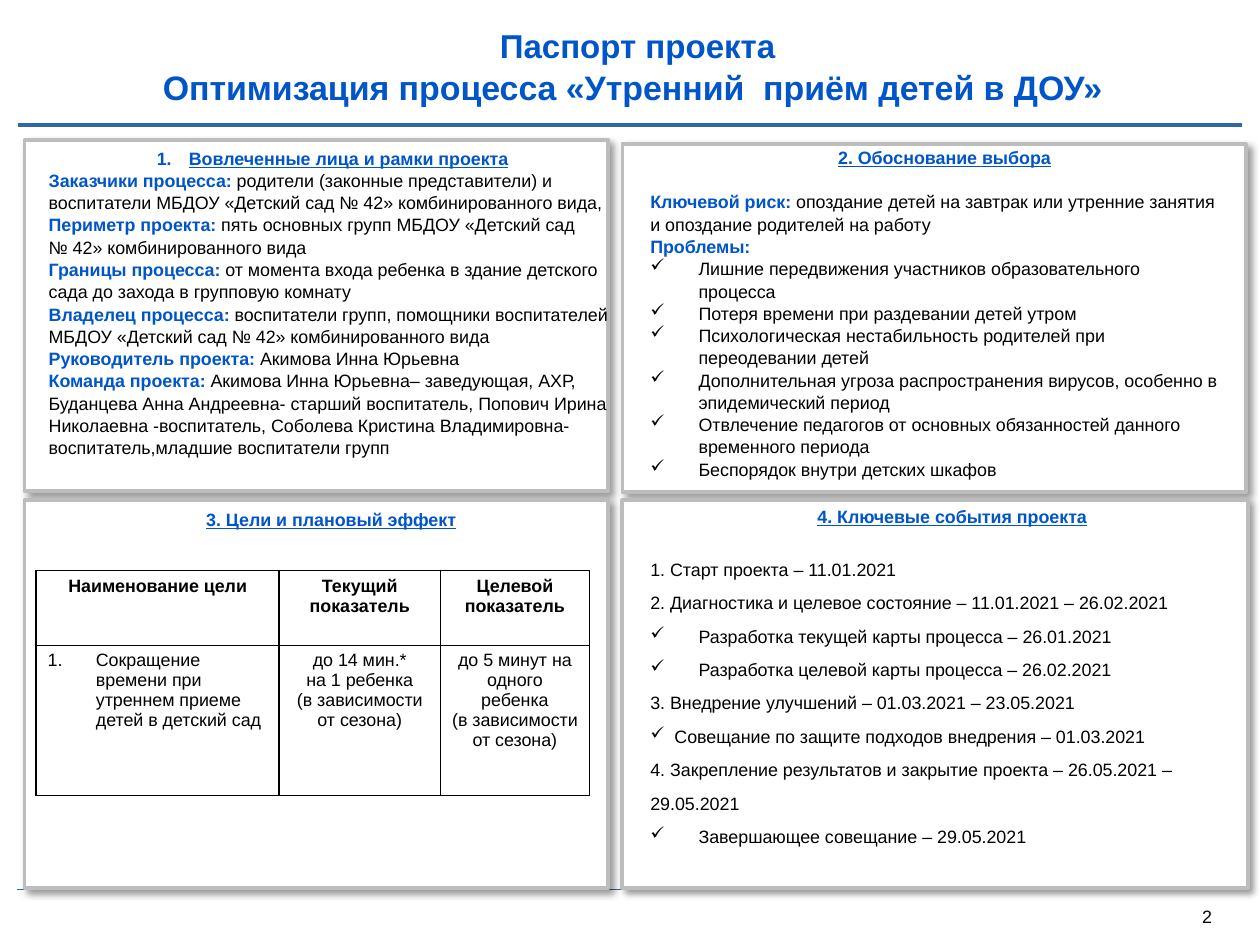
from lxml import etree
from pptx import Presentation
from pptx import util as u
from pptx.dml.color import RGBColor
from pptx.enum import shapes, text
from pptx.oxml.ns import qn

BLUE = RGBColor(0x00, 0x55, 0xC8)
RULE_BLUE = RGBColor(0x2E, 0x69, 0xA5)
BLACK = RGBColor(0, 0, 0)
WHITE = RGBColor(255, 255, 255)
GREY = RGBColor(0xBD, 0xBD, 0xBD)
CENTER = text.PP_ALIGN.CENTER
LEFT = text.PP_ALIGN.LEFT
HEADING = dict(color=BLUE, bold=True, underline=True, align=CENTER)
CHECK = dict(bullet="✓", indent=27)
FONT = "Arial"


def add_element(parent, tag, **attributes):
    return etree.SubElement(parent, qn(tag), {k: str(v) for k, v in attributes.items()})


def write_paragraph(paragraph, words, size=10, color=BLACK, bold=False, underline=False,
                    align=LEFT, spacing=1.04, bullet=None, indent=0):
    """Words before a | become a bold blue label; a bullet "1." is automatic."""
    if bullet:
        properties = paragraph._p.get_or_add_pPr()
        properties.set("marL", str(u.Pt(indent)))
        properties.set("indent", str(-u.Pt(indent)))
        if bullet == "1.":
            add_element(properties, "a:buFont", typeface=FONT)
            add_element(properties, "a:buAutoNum", type="arabicPeriod")
        else:
            add_element(properties, "a:buChar", char=bullet)
    paragraph.alignment = align
    paragraph.line_spacing = spacing
    label, bar, rest = words.rpartition("|")
    for part, is_label in ((label, True), (rest, False)):
        if not part:
            continue
        run = paragraph.add_run()
        run.text = part
        run.font.name = FONT
        run.font.size = u.Pt(size)
        run.font.bold = bold or is_label
        run.font.underline = underline
        run.font.color.rgb = BLUE if is_label else color


def write_frame(frame, lines, **style):
    """Each line is a string or a (string, own style) pair."""
    for index, line in enumerate(lines):
        words, own = (line, {}) if isinstance(line, str) else line
        paragraph = frame.paragraphs[0] if index == 0 else frame.add_paragraph()
        write_paragraph(paragraph, words, **{**style, **own})


def add_text(slide, box, lines, anchor=text.MSO_ANCHOR.TOP, margins=(7.2, 3.6),
             wrap=True, **style):
    frame = slide.shapes.add_textbox(*map(u.Pt, box)).text_frame
    frame.word_wrap = wrap
    frame.vertical_anchor = anchor
    frame.margin_left = frame.margin_right = u.Pt(margins[0])
    frame.margin_top = frame.margin_bottom = u.Pt(margins[1])
    write_frame(frame, lines, **style)


def add_rule(slide, left, right, y, width):
    line = slide.shapes.add_connector(shapes.MSO_CONNECTOR.STRAIGHT,
                                      u.Pt(left), u.Pt(y), u.Pt(right), u.Pt(y))
    line.line.color.rgb = RULE_BLUE
    line.line.width = u.Pt(width)
    add_element(line._element.spPr, "a:effectLst")


def add_panel(slide, box):
    panel = slide.shapes.add_shape(shapes.MSO_SHAPE.RECTANGLE, *map(u.Pt, box))
    panel.fill.solid()
    panel.fill.fore_color.rgb = WHITE
    panel.line.color.rgb = GREY
    panel.line.width = u.Pt(2)
    effects = add_element(panel._element.spPr, "a:effectLst")
    shadow = add_element(effects, "a:outerShdw", blurRad=u.Pt(4), dist=u.Pt(3),
                         dir=45 * 60000, algn="tl", rotWithShape=0)
    shade = add_element(shadow, "a:srgbClr", val="000000")
    add_element(shade, "a:alpha", val=40000)


def title_region(slide, box):
    add_text(slide, box, [("Паспорт проекта", dict(size=18.5)),
                          "Оптимизация процесса «Утренний  приём детей в ДОУ» "],
             anchor=text.MSO_ANCHOR.MIDDLE, margins=(0, 0),
             size=19, color=BLUE, bold=True, align=CENTER, spacing=1.03)


def people_region(slide, box):
    left, top, width, height = box
    add_panel(slide, box)
    add_text(slide, (left + 6.5, top, 332, 177), [
        ("Вовлеченные лица и рамки проекта", dict(HEADING, bullet="1.", indent=18)),
        "Заказчики процесса: |родители (законные представители) и воспитатели "
        "МБДОУ «Детский сад № 42» комбинированного вида, ",
        "Периметр проекта: |пять основных групп МБДОУ «Детский сад",
        "№ 42» комбинированного вида",
        "Границы процесса: |от момента входа ребенка в здание детского сада "
        "до захода в групповую комнату",
        "Владелец процесса: |воспитатели групп, помощники воспитателей "
        "МБДОУ «Детский сад № 42» комбинированного вида",
        "Руководитель проекта: |Акимова Инна Юрьевна",
        "Команда проекта: |Акимова Инна Юрьевна– заведующая, АХР, "
        "Буданцева Анна Андреевна- старший воспитатель, Попович Ирина Николаевна "
        "-воспитатель, Соболева Кристина Владимировна- "
        "воспитатель,младшие воспитатели групп",
    ])


def reasons_region(slide, box):
    left, top, width, height = box
    add_panel(slide, box)
    add_text(slide, (left + 14.4, top - 2.2, 332, 19.4), ["2. Обоснование выбора"], **HEADING)
    problems = [
        "Лишние передвижения участников образовательного процесса",
        "Потеря времени при раздевании детей утром",
        "Психологическая нестабильность родителей при переодевании детей",
        "Дополнительная угроза распространения вирусов, особенно в эпидемический период",
        "Отвлечение педагогов от основных обязанностей данного временного периода",
        "Беспорядок внутри детских шкафов",
    ]
    add_text(slide, (left + 8.6, top + 22.4, 332.6, 165), [
        "Ключевой риск: |опоздание детей на завтрак или утренние занятия "
        "и опоздание родителей на работу",
        "Проблемы:|",
        *((problem, CHECK) for problem in problems),
    ])


def border_cell(cell):
    properties = cell._tc.get_or_add_tcPr()
    for position, side in enumerate(("a:lnL", "a:lnR", "a:lnT", "a:lnB")):
        line = etree.Element(qn(side), w=str(u.Pt(1)))
        fill = add_element(line, "a:solidFill")
        add_element(fill, "a:srgbClr", val="000000")
        properties.insert(position, line)


def goals_region(slide, box):
    left, top, width, height = box
    add_panel(slide, box)
    add_text(slide, (left + 5, top + 0.7, 333.4, 19.4), ["3. Цели и плановый эффект"],
             **HEADING)
    rows = [
        [["Наименование цели"], ["Текущий показатель"], ["Целевой показатель"]],
        [[("Сокращение времени при утреннем приеме детей в детский сад",
           dict(bullet="1.", indent=27, align=LEFT))],
         ["до 14 мин.*", "на 1 ребенка", "(в зависимости от сезона)"],
         ["до 5 минут на одного ребенка", "(в зависимости от сезона)"]],
    ]
    column_widths, row_heights = (136.1, 90.3, 83.5), (41.8, 84.2)
    table = slide.shapes.add_table(2, 3, u.Pt(left + 6.5), u.Pt(top + 39.6),
                                   u.Pt(sum(column_widths)), u.Pt(sum(row_heights))).table
    for column, column_width in zip(table.columns, column_widths):
        column.width = u.Pt(column_width)
    for row_index, (row, row_height) in enumerate(zip(rows, row_heights)):
        table.rows[row_index].height = u.Pt(row_height)
        for column_index, lines in enumerate(row):
            cell = table.cell(row_index, column_index)
            cell.fill.solid()
            cell.fill.fore_color.rgb = WHITE
            cell.margin_left = cell.margin_right = u.Pt(6.5)
            cell.margin_top = cell.margin_bottom = u.Pt(3)
            write_frame(cell.text_frame, lines, bold=row_index == 0,
                        align=CENTER, spacing=1.0)
            border_cell(cell)


def events_region(slide, box):
    left, top, width, height = box
    add_panel(slide, box)
    add_text(slide, (left + 18, top - 0.7, 333.4, 19.4), ["4. Ключевые события проекта"],
             **HEADING)
    add_text(slide, (left + 8.6, top + 22.4, 326, 168.5), [
        "1. Старт проекта – 11.01.2021",
        "2. Диагностика и целевое состояние – 11.01.2021 – 26.02.2021",
        ("Разработка текущей карты процесса – 26.01.2021", CHECK),
        ("Разработка целевой карты процесса – 26.02.2021", CHECK),
        "3. Внедрение улучшений – 01.03.2021 – 23.05.2021",
        ("Совещание по защите подходов внедрения – 01.03.2021", dict(CHECK, indent=13.5)),
        "4. Закрепление результатов и закрытие проекта – 26.05.2021 – 29.05.2021",
        ("Завершающее совещание – 29.05.2021", CHECK),
    ], spacing=1.56)


def main():
    presentation = Presentation()
    presentation.slide_width, presentation.slide_height = u.Pt(705.6), u.Pt(529.2)
    slide = presentation.slides.add_slide(presentation.slide_layouts[6])

    # Rules, page number and title
    add_rule(slide, 9.5, 695.5, 498.2, 0.75)
    add_rule(slide, 10, 695.5, 69.8, 2.25)
    add_text(slide, (673.2, 506.9, 16.6, 12.2), ["2"], anchor=text.MSO_ANCHOR.MIDDLE,
             margins=(0, 0), wrap=False)
    title_region(slide, (87, 13.7, 540, 46))

    # Four panels
    people_region(slide, (13.7, 78.5, 327, 196.6))
    goals_region(slide, (13.7, 280, 327, 217.4))
    reasons_region(slide, (348.5, 80.6, 349.2, 195))
    events_region(slide, (348.5, 280, 350.6, 217.4))
    presentation.save("out.pptx")


if __name__ == "__main__":
    main()
